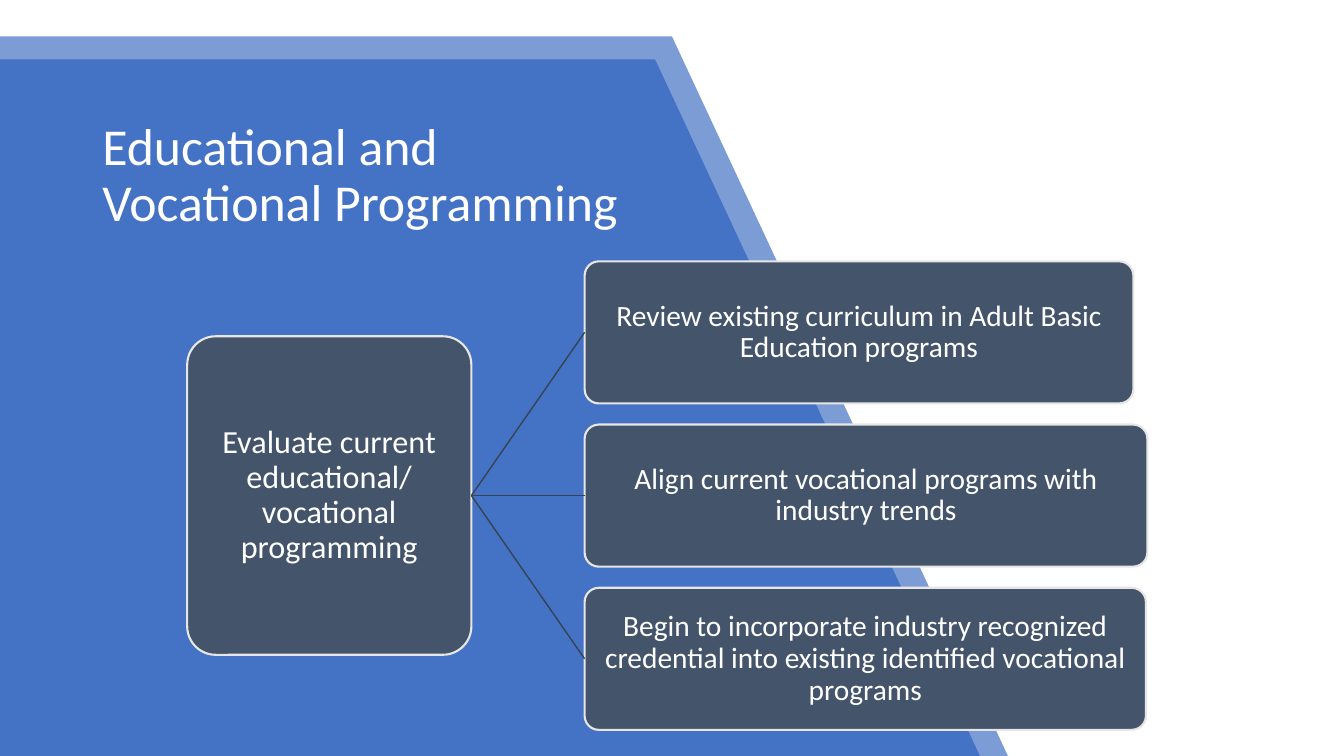
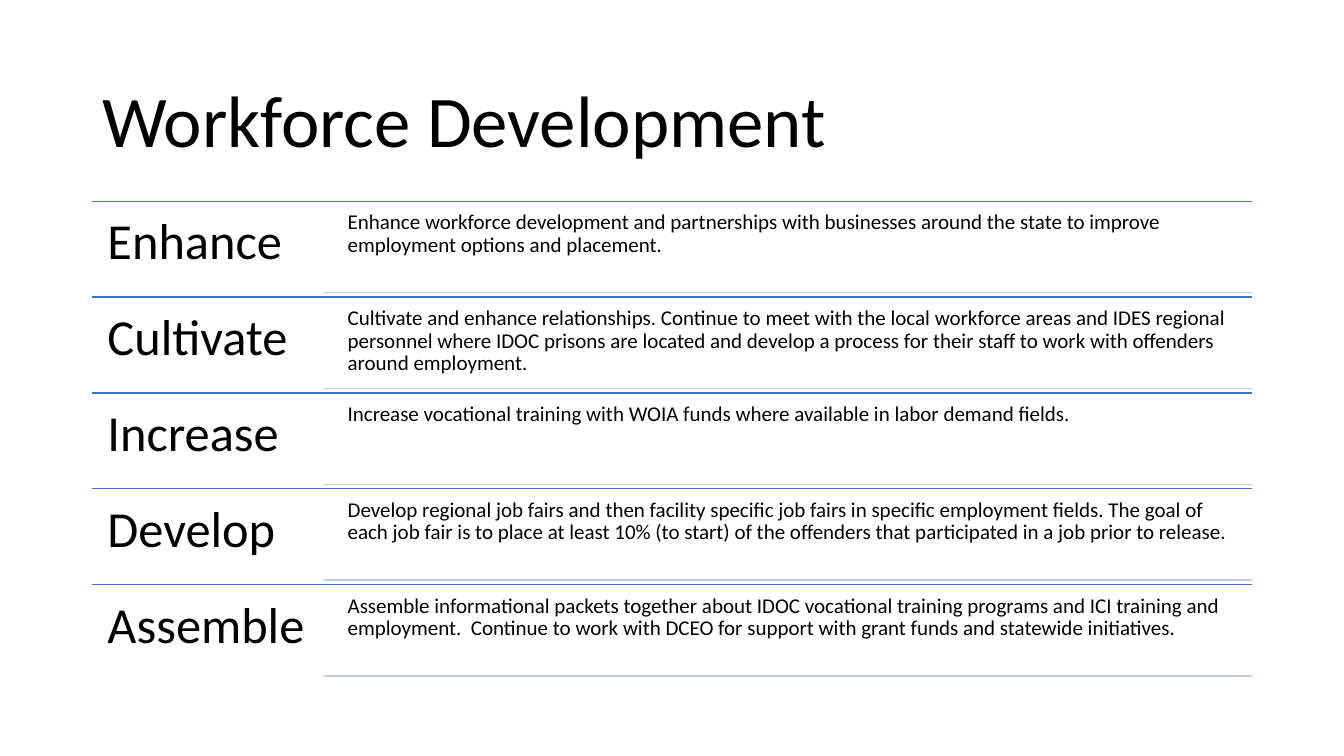
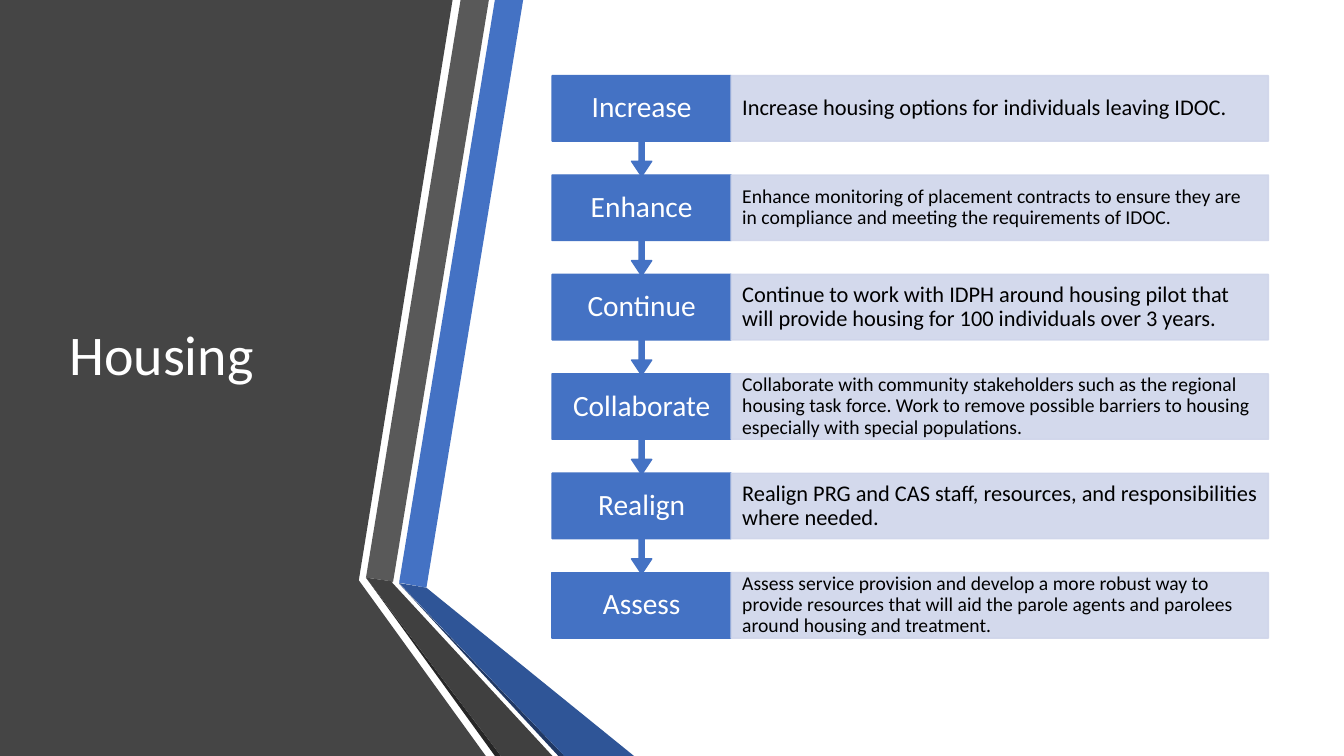
import lxml.etree
import pptx
import pptx.dml.color
import pptx.enum.shapes
import pptx.enum.text
import pptx.oxml.ns
import pptx.util

Pt = pptx.util.Pt
SHAPE = pptx.enum.shapes.MSO_SHAPE
ALIGN = pptx.enum.text.PP_ALIGN
ANCHOR = pptx.enum.text.MSO_ANCHOR

# Shared look
FONT = "Calibri"
WIDTH, HEIGHT = 960, 540
WHITE, BLACK = "FFFFFF", "000000"
BLUE, DARK_BLUE, NAVY = "4472C4", "2F5597", "203864"
SLATE, SLATE_LINE, SILVER = "44546A", "364355", "E7E6E6"
PALE_RULE, PALE_FILL = "C1C9E4", "CFD5EA"

PROGRAM_STEPS = [
    ("Review existing curriculum in Adult Basic Education programs", 392),
    ("Align current vocational programs with industry trends", 402),
    ("Begin to incorporate industry recognized credential into existing "
     "identified vocational programs", 401),
]

WORKFORCE_ROWS = [
    ("Enhance", "Enhance workforce development and partnerships with businesses around "
     "the state to improve employment options and placement."),
    ("Cultivate", "Cultivate and enhance relationships. Continue to meet with the local "
     "workforce areas and IDES regional personnel where IDOC prisons are located and develop "
     "a process for their staff to work with offenders around employment."),
    ("Increase", "Increase vocational training with WOIA funds where available in labor "
     "demand fields."),
    ("Develop", "Develop regional job fairs and then facility specific job fairs in specific "
     "employment fields. The goal of each job fair is to place at least 10% (to start) of the "
     "offenders that participated in a job prior to release."),
    ("Assemble", "Assemble informational packets together about IDOC vocational training "
     "programs and ICI training and employment.  Continue to work with DCEO for support with "
     "grant funds and statewide initiatives."),
]

HOUSING_STEPS = [
    ("Increase", "Increase housing options for individuals leaving IDOC.", 16),
    ("Enhance", "Enhance monitoring of placement contracts to ensure they are in compliance "
     "and meeting the requirements of IDOC.", 14),
    ("Continue", "Continue to work with IDPH around housing pilot that will provide housing "
     "for 100 individuals over 3 years.", 16),
    ("Collaborate", "Collaborate with community stakeholders such as the regional housing "
     "task force. Work to remove possible barriers to housing especially with special "
     "populations.", 14),
    ("Realign", "Realign PRG and CAS staff, resources, and responsibilities where needed.", 16),
    ("Assess", "Assess service provision and develop a more robust way to provide resources "
     "that will aid the parole agents and parolees around housing and treatment.", 14),
]

# Outlines of the ribbon behind the housing title, back to front
HOUSING_PANELS = [
    ("454545", [(0, 0), (323.3, 0), (256.3, 414.5), (347, 540), (0, 540)]),
    (BLUE, [(285.1, 416.2), (304.6, 419.8), (373.7, 0), (353.5, 0)]),
    ("595959", [(349.2, 0), (329, 0), (261.4, 412.6), (280.8, 415.4)]),
    ("262626", [(261.4, 412.6), (353.5, 540), (357.8, 540)]),
    (NAVY, [(285.1, 416.9), (398.9, 540), (403.2, 540)]),
    (DARK_BLUE, [(285.1, 416.5), (403.2, 540), (452.9, 540), (304.6, 419.8)]),
    ("404040", [(261.4, 412.6), (357.8, 540), (394.6, 540), (280.1, 416.2), (280.8, 415.4)]),
]


def color(hex_value):
    return pptx.dml.color.RGBColor.from_string(hex_value)


def write(shape, text, size, ink=BLACK, align=ALIGN.LEFT, anchor=ANCHOR.MIDDLE,
          insets=(7.2, 3.6, 7.2, 3.6)):
    """Fill a shape with one formatted paragraph; insets are left, top, right, bottom."""
    frame = shape.text_frame
    frame.word_wrap = True
    frame.vertical_anchor = anchor
    frame.margin_left, frame.margin_top, frame.margin_right, frame.margin_bottom = map(Pt, insets)
    paragraph = frame.paragraphs[0]
    paragraph.alignment = align
    paragraph.line_spacing = 0.9
    run = paragraph.add_run()
    run.text = text
    run.font.name = FONT
    run.font.size = Pt(size)
    run.font.color.rgb = color(ink)


def add_text(slide, box, text, size, **text_format):
    write(slide.shapes.add_textbox(*map(Pt, box)), text, size, **text_format)


def paint(shape, fill, line=None, line_width=1, opacity=100):
    shape.shadow.inherit = False
    shape.fill.solid()
    shape.fill.fore_color.rgb = color(fill)
    if line:
        shape.line.color.rgb = color(line)
        shape.line.width = Pt(line_width)
    else:
        shape.line.fill.background()
    if opacity < 100:
        qn = pptx.oxml.ns.qn
        for paint_color in list(shape._element.spPr.iter(qn("a:srgbClr"))):
            alpha = lxml.etree.SubElement(paint_color, qn("a:alpha"))
            alpha.set("val", str(opacity * 1000))


def add_box(slide, kind, box, fill, adjustments=(), **paint_format):
    shape = slide.shapes.add_shape(kind, *map(Pt, box))
    for index, value in enumerate(adjustments):
        shape.adjustments[index] = value
    paint(shape, fill, **paint_format)
    return shape


def add_polygon(slide, points, fill, opacity=100):
    corners = [(Pt(x), Pt(y)) for x, y in points]
    builder = slide.shapes.build_freeform(*corners[0])
    builder.add_line_segments(corners[1:], close=True)
    paint(builder.convert_to_shape(), fill, opacity=opacity)


def add_line(slide, start, end, ink):
    connector = slide.shapes.add_connector(
        pptx.enum.shapes.MSO_CONNECTOR.STRAIGHT, *map(Pt, start + end))
    connector.line.color.rgb = color(ink)
    connector.line.width = Pt(1)
    lxml.etree.SubElement(connector._element.spPr, pptx.oxml.ns.qn("a:effectLst"))
    return connector


def new_slide(presentation):
    slide = presentation.slides.add_slide(presentation.slide_layouts[6])
    slide.background.fill.solid()
    slide.background.fill.fore_color.rgb = color(WHITE)
    return slide


def build_programming(presentation):
    slide = new_slide(presentation)

    # Slanted backdrop: pale edge, then the full-colour panel
    for top, upper_right, lower_right, opacity in [(26, 480, 720, 70), (42.5, 468, 700, 100)]:
        add_polygon(slide, [(0, top), (upper_right, top), (lower_right, HEIGHT), (0, HEIGHT)],
                    BLUE, opacity)
    add_text(slide, (66, 72, 396, 98), "Educational and Vocational Programming", 37,
             ink=WHITE, anchor=ANCHOR.BOTTOM)

    # Goal on the left, one branch for each step
    def add_card(box, text, size, inset):
        card = add_box(slide, SHAPE.ROUNDED_RECTANGLE, box, SLATE, adjustments=[0.1],
                       line=SILVER, line_width=1.5)
        write(card, text, size, ink=WHITE, align=ALIGN.CENTER, insets=[inset] * 4)
        return card

    middle, pitch, step_height = 354, 116.6, 101.5
    goal_height, step_left = 227.5, 417.6
    goal = add_card((133.7, middle - goal_height / 2, 203, goal_height),
                    "Evaluate current educational/ vocational programming", 23, 1.4)
    for index, (text, width) in enumerate(PROGRAM_STEPS):
        center = middle + (index - 1) * pitch
        step = add_card((step_left, center - step_height / 2, width, step_height), text, 21, 0.9)
        branch = add_line(slide, (336.7, middle), (step_left, center), SLATE_LINE)
        branch.begin_connect(goal, 3)
        branch.end_connect(step, 1)


def build_workforce(presentation):
    slide = new_slide(presentation)
    add_text(slide, (66, 44, 828, 89), "Workforce Development", 52)

    # Ruled rows: label on the left, detail on the right
    left, right, pitch = 66, 894, 68.45
    for index, (label, detail) in enumerate(WORKFORCE_ROWS):
        top = 143.8 + index * pitch
        add_line(slide, (left, top), (right, top), BLUE)
        add_text(slide, (left, top, 165.6, pitch), label, 36,
                 anchor=ANCHOR.TOP, insets=[10.8] * 4)
        add_text(slide, (244, top + 3, 650, 62), detail, 15,
                 anchor=ANCHOR.TOP, insets=[4.3] * 4)
        add_line(slide, (231.6, top + 65.2), (right, top + 65.2), PALE_RULE)


def build_housing(presentation):
    slide = new_slide(presentation)
    for fill, points in HOUSING_PANELS:
        add_polygon(slide, points, fill)
    add_text(slide, (42.5, 54, 219, 402), "Housing", 40, ink=WHITE)

    # Chain of steps: each label points down to the next, the last is plain
    left, label_width, box_height, callout_height = 394.4, 127.8, 46.8, 72
    for index, (label, detail, size) in enumerate(HOUSING_STEPS):
        top = 54 + index * 71
        if index < len(HOUSING_STEPS) - 1:
            step = add_box(slide, SHAPE.DOWN_ARROW_CALLOUT,
                           (left, top, label_width, callout_height), BLUE,
                           adjustments=[0.05, 0.1, 0.15, 0.65], line=BLUE)
        else:
            step = add_box(slide, SHAPE.RECTANGLE, (left, top, label_width, box_height),
                           BLUE, line=BLUE)
        write(step, label, 21, ink=WHITE, align=ALIGN.CENTER, insets=(9, 0, 9, 0))
        note = add_box(slide, SHAPE.RECTANGLE, (left + label_width, top, 383.8, box_height),
                       PALE_FILL, line=PALE_FILL, opacity=90)
        write(note, detail, size, insets=(8, 0, 7, 0))


def main():
    presentation = pptx.Presentation()
    presentation.slide_width, presentation.slide_height = Pt(WIDTH), Pt(HEIGHT)
    build_programming(presentation)
    build_workforce(presentation)
    build_housing(presentation)
    presentation.save("out.pptx")


if __name__ == "__main__":
    main()
